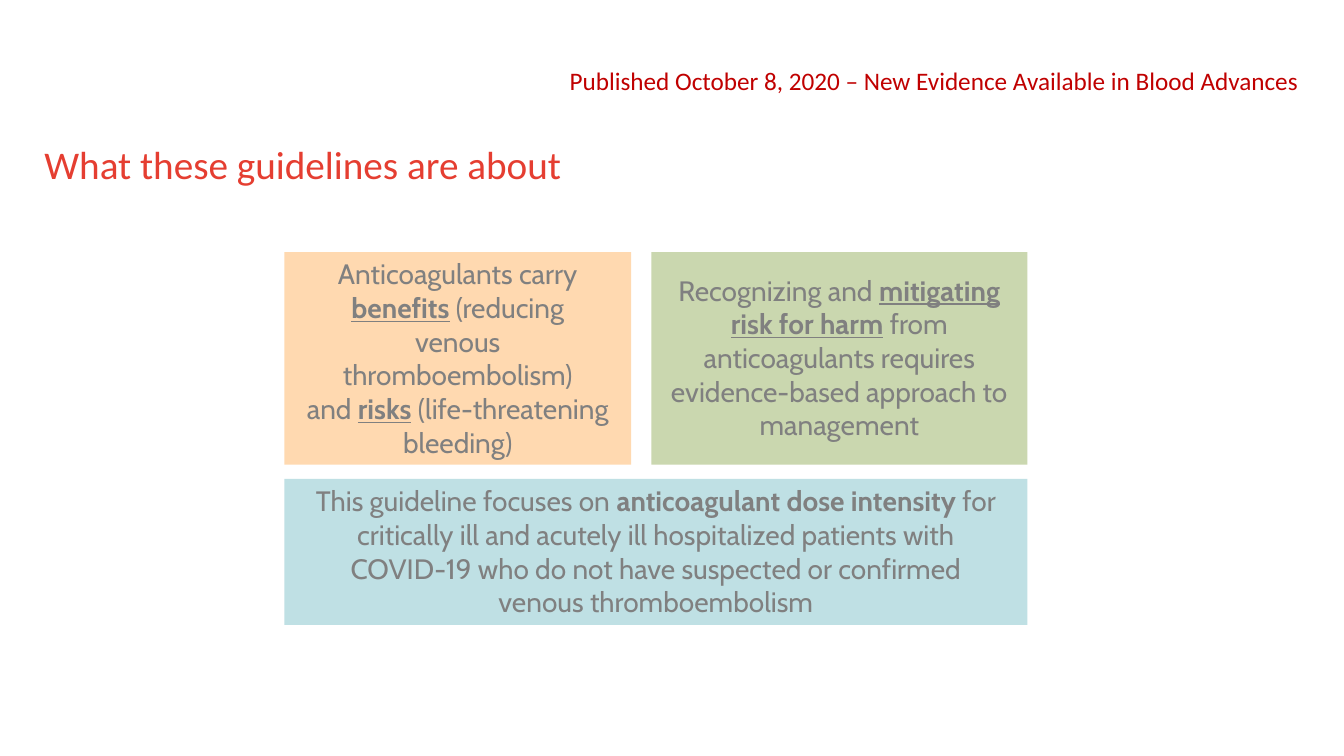
from dataclasses import dataclass

from pptx import Presentation
from pptx.dml.color import RGBColor
from pptx.enum.shapes import MSO_SHAPE
from pptx.enum.text import MSO_ANCHOR, PP_ALIGN
from pptx.util import Inches, Pt

RECTANGLE = MSO_SHAPE.RECTANGLE
TOP = MSO_ANCHOR.TOP
LEFT, CENTER = PP_ALIGN.LEFT, PP_ALIGN.CENTER


@dataclass(frozen=True)
class Theme:
    heading_font: str = "Calibri"
    body_font: str = "Cabin"
    title_size: int = 28
    notice_size: int = 18
    body_size: int = 20
    title: str = "E53E31"
    notice: str = "C00000"
    body: str = "808080"
    orange: str = "FFD9B0"
    green: str = "CAD7AF"
    blue: str = "BFE0E4"


@dataclass(frozen=True)
class Span:
    text: str
    bold: bool = False
    underline: bool = False


@dataclass(frozen=True)
class Paragraph:
    spans: tuple[Span, ...]
    margin: float = 0


@dataclass(frozen=True)
class Panel:
    left: float
    top: float
    width: float
    height: float
    fill: str
    inset_top: float
    paragraphs: tuple[Paragraph, ...]


THEME = Theme()
GRID_LEFT, GRID_RIGHT = 2.82, 10.19
ROW_TOP, ROW_HEIGHT = 2.5, 2.11
GREEN_LEFT = 6.46

PANELS = (
    Panel(GRID_LEFT, ROW_TOP, 3.44, ROW_HEIGHT, THEME.orange, 0.05, (
        Paragraph((Span("Anticoagulants carry "), Span("benefits", True, True),
                   Span(" (reducing venous thromboembolism)")), 0.51),
        Paragraph((Span("and "), Span("risks", True, True),
                   Span(" (life-threatening bleeding)")), 0.13),
    )),
    Panel(GRID_LEFT, 4.75, GRID_RIGHT - GRID_LEFT, 1.45, THEME.blue, 0.05, (
        Paragraph((Span("This guideline focuses on "),
                   Span("anticoagulant dose intensity", True),
                   Span(" for critically ill and acutely ill hospitalized patients with "
                        "COVID-19 who do not have suspected or confirmed venous "
                        "thromboembolism")), 0.26),
    )),
    Panel(GREEN_LEFT, ROW_TOP, GRID_RIGHT - GREEN_LEFT, ROW_HEIGHT, THEME.green, 0.21, (
        Paragraph((Span("Recognizing and "),
                   Span("mitigating risk for harm", True, True),
                   Span(" from anticoagulants requires evidence-based approach to "
                        "management")), 0.13),
    )),
)


def write_text(s, paragraphs: tuple[Paragraph, ...], *, font: str, size: int,
               color: str, align=LEFT, inset_top: float = 0.01) -> None:
    tf = s.text_frame
    tf.word_wrap = True
    tf.vertical_anchor = TOP
    tf.margin_left = tf.margin_right = tf.margin_bottom = 0
    tf.margin_top = Inches(inset_top)
    for i, paragraph in enumerate(paragraphs):
        p = tf.add_paragraph() if i else tf.paragraphs[0]
        p.alignment = align
        p.space_before = Pt(0)
        if paragraph.margin:
            for side in ("marL", "marR"):
                p._p.get_or_add_pPr().set(side, str(Inches(paragraph.margin)))
        for span in paragraph.spans:
            r = p.add_run()
            r.text = span.text
            r.font.name = font
            r.font.size = Pt(size)
            r.font.color.rgb = RGBColor.from_string(color)
            r.font.bold = span.bold
            r.font.underline = span.underline


def add_panel(slide, panel: Panel) -> None:
    sp = slide.shapes.add_shape(RECTANGLE, Inches(panel.left), Inches(panel.top),
                                Inches(panel.width), Inches(panel.height))
    sp.shadow.inherit = False
    sp.fill.solid()
    sp.fill.fore_color.rgb = RGBColor.from_string(panel.fill)
    sp.line.fill.background()
    write_text(sp, panel.paragraphs, font=THEME.body_font, size=THEME.body_size,
               color=THEME.body, align=CENTER, inset_top=panel.inset_top)


def main() -> None:
    prs = Presentation()
    prs.slide_width, prs.slide_height = Inches(13.33), Inches(7.5)
    slide = prs.slides.add_slide(prs.slide_layouts.get_by_name("Title Only"))

    title = slide.shapes.title
    title.left, title.top = Inches(0.44), Inches(1.38)
    title.width, title.height = Inches(7.52), Inches(0.49)
    write_text(title, (Paragraph((Span("What these guidelines are about"),)),),
               font=THEME.heading_font, size=THEME.title_size, color=THEME.title)

    for panel in PANELS:
        add_panel(slide, panel)

    notice = slide.shapes.add_textbox(Inches(5.65), Inches(0.64), Inches(7.35), Inches(0.33))
    notice_text = "Published October 8, 2020 – New Evidence Available in Blood Advances"
    write_text(notice, (Paragraph((Span(notice_text),)),), font=THEME.heading_font,
               size=THEME.notice_size, color=THEME.notice)

    prs.save("out.pptx")


if __name__ == "__main__":
    main()
